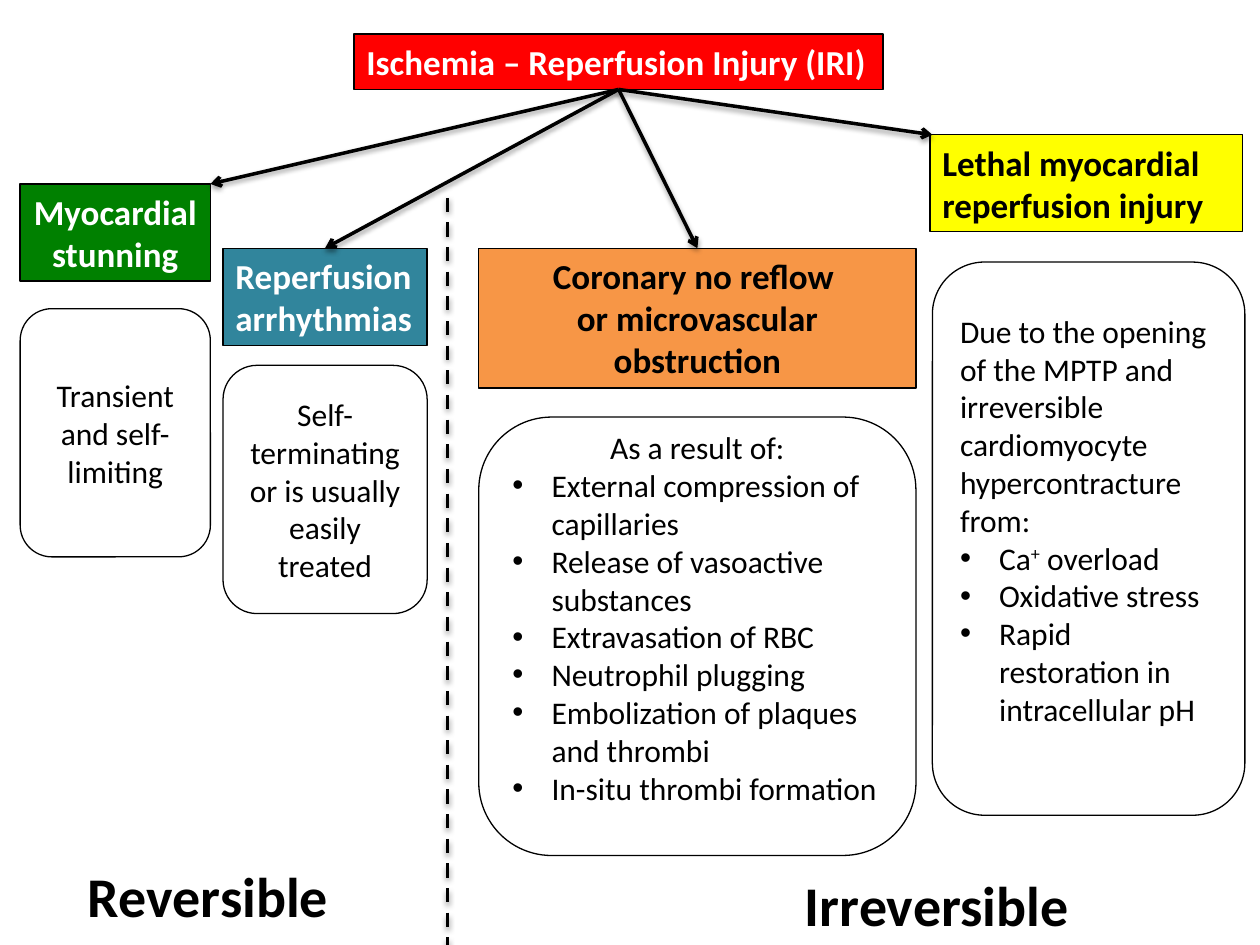
"""Build a slide that sorts the forms of ischemia-reperfusion injury by reversibility."""
from dataclasses import dataclass
from typing import Optional

import lxml.etree
import pptx
import pptx.dml.color
import pptx.enum.dml
import pptx.enum.shapes
import pptx.enum.text
import pptx.oxml
import pptx.oxml.ns
import pptx.util

Inches = pptx.util.Inches
Pt = pptx.util.Pt
Align = pptx.enum.text.PP_ALIGN
Anchor = pptx.enum.text.MSO_ANCHOR
AutoSize = pptx.enum.text.MSO_AUTO_SIZE
Preset = pptx.enum.shapes.MSO_SHAPE
qn = pptx.oxml.ns.qn


@dataclass(frozen=True)
class Theme:
    """Colours, font and type sizes of the slide."""
    font: str = "Calibri"
    black: str = "000000"
    white: str = "FFFFFF"
    red: str = "FF0000"
    green: str = "008000"
    teal: str = "31859C"
    orange: str = "F79646"
    yellow: str = "FFFF00"
    heading: int = 20
    body: int = 18
    verdict: int = 32
    outline: float = 0.75
    arrow: float = 2


@dataclass(frozen=True)
class Area:
    """Position and size in inches."""
    left: float
    top: float
    width: float
    height: float

    def lengths(self) -> tuple:
        """Return the four values as lengths."""
        return tuple(Inches(value) for value in (self.left, self.top, self.width, self.height))


@dataclass(frozen=True)
class Heading:
    """Coloured label naming one kind of injury."""
    area: Area
    lines: tuple
    fill: str
    color: str
    align: Align = Align.LEFT
    wrap: bool = False


@dataclass(frozen=True)
class Detail:
    """Rounded panel with an introduction and optional bullets."""
    area: Area
    intro: tuple
    bullets: tuple = ()
    align: Align = Align.CENTER


@dataclass(frozen=True)
class Arrow:
    """Arrow from the title to a point or to the top of a heading."""
    end: tuple
    target: Optional[int] = None


THEME = Theme()
TITLE = Heading(Area(2.81, 0.27, 4.2, 0.44), ("Ischemia – Reperfusion Injury (IRI)",), THEME.red, THEME.white)
HEADINGS = (
    Heading(Area(0.16, 1.46, 1.51, 0.77), ("Myocardial ", "stunning"), THEME.green, THEME.white, Align.CENTER),
    Heading(Area(1.77, 1.97, 1.62, 0.77), ("Reperfusion", "arrhythmias"), THEME.teal, THEME.white),
    Heading(Area(3.8, 1.97, 3.47, 1.11), ("Coronary no reflow ", "or microvascular obstruction"),
            THEME.orange, THEME.black, Align.CENTER, True),
    Heading(Area(7.38, 1.07, 2.48, 0.77), ("Lethal myocardial", "reperfusion injury"),
            THEME.yellow, THEME.black, wrap=True),
)
DETAILS = (
    Detail(Area(0.16, 2.45, 1.51, 1.97), ("Transient and self-limiting",)),
    Detail(Area(1.77, 2.9, 1.62, 1.97), ("Self-terminating or is usually easily treated",)),
    Detail(Area(7.4, 2.08, 2.48, 4.39),
           ("Due to the opening of the MPTP and irreversible cardiomyocyte", "hypercontracture from:"),
           ("Ca^+^ overload", "Oxidative stress", "Rapid restoration in intracellular pH"), Align.LEFT),
    Detail(Area(3.8, 3.31, 3.47, 3.48), ("As a result of:",),
           ("External compression of capillaries", "Release of vasoactive substances", "Extravasation of RBC",
            "Neutrophil plugging", "Embolization of plaques and thrombi", "In-situ thrombi formation")),
)
ARROWS = (Arrow((1.67, 1.46)), Arrow((2.58, 1.97), 1), Arrow((5.54, 1.97), 2), Arrow((7.4, 1.07)))
VERDICTS = {"Reversible": Area(0.6, 6.79, 2.14, 0.64), "Irreversible": Area(6.29, 6.86, 2.33, 0.64)}
SHADOW = (
    f'<a:effectLst xmlns:a="{pptx.oxml.ns.nsuri("a")}">'
    f'<a:outerShdw blurRad="{Pt(3.1)}" dist="{Pt(1.6)}" dir="5400000" rotWithShape="0">'
    f'<a:srgbClr val="{THEME.black}"><a:alpha val="38000"/></a:srgbClr></a:outerShdw></a:effectLst>'
)


def rgb(value: str) -> pptx.dml.color.RGBColor:
    """Turn a hex string into a colour."""
    return pptx.dml.color.RGBColor.from_string(value)


def add_bullet(para) -> None:
    """Give a paragraph a hanging round bullet."""
    properties = para._p.get_or_add_pPr()
    properties.set("marL", str(Inches(0.31)))
    properties.set("indent", str(-Inches(0.31)))
    lxml.etree.SubElement(properties, qn("a:buFont")).set("typeface", "Arial")
    lxml.etree.SubElement(properties, qn("a:buChar")).set("char", "•")


def write(frame, lines: tuple, size: int, color: str, align: Align, bold: bool, bullets: tuple = ()) -> None:
    """Fill a frame with lines and bullets; carets enclose superscripts."""
    frame.text = "\n".join(lines + bullets)
    for index, para in enumerate(frame.paragraphs):
        is_bullet = index >= len(lines)
        para.alignment = Align.LEFT if is_bullet else align
        if is_bullet:
            add_bullet(para)
        first, *others = para.text.split("^")
        para.runs[0].text = first
        for position, part in enumerate(others):
            span = para.add_run()
            span.text = part
            if position % 2 == 0:
                span._r.get_or_add_rPr().set("baseline", "30000")
        for span in para.runs:
            span.font.name = THEME.font
            span.font.size = Pt(size)
            span.font.bold = bold
            span.font.color.rgb = rgb(color)


def draw_box(page, preset: Preset, area: Area, fill: str):
    """Draw a flat outlined box."""
    box = page.shapes.add_shape(preset, *area.lengths())
    box.shadow.inherit = False
    box.fill.solid()
    box.fill.fore_color.rgb = rgb(fill)
    box.line.color.rgb = rgb(THEME.black)
    box.line.width = Pt(THEME.outline)
    return box


def fit_frame(box, wrap: bool):
    """Make a box grow with its text and return its frame."""
    frame = box.text_frame
    frame.word_wrap = wrap
    frame.auto_size = AutoSize.SHAPE_TO_FIT_TEXT
    frame.vertical_anchor = Anchor.TOP
    return frame


def draw_heading(page, heading: Heading):
    """Draw a coloured heading."""
    box = draw_box(page, Preset.RECTANGLE, heading.area, heading.fill)
    write(fit_frame(box, heading.wrap), heading.lines, THEME.heading, heading.color, heading.align, True)
    return box


def draw_detail(page, detail: Detail) -> None:
    """Draw a rounded panel, lifting bulleted text by one line."""
    frame = draw_box(page, Preset.ROUNDED_RECTANGLE, detail.area, THEME.white).text_frame
    frame.word_wrap = True
    frame.vertical_anchor = Anchor.MIDDLE
    if detail.bullets:
        frame.margin_bottom = Inches(0.35)
    write(frame, detail.intro, THEME.body, THEME.black, detail.align, False, detail.bullets)


def draw_line(page, start: tuple, end: tuple):
    """Draw a straight black line with a soft shadow."""
    line = page.shapes.add_connector(
        pptx.enum.shapes.MSO_CONNECTOR.STRAIGHT, *(Inches(value) for value in start + end))
    line.line.color.rgb = rgb(THEME.black)
    line.line.width = Pt(THEME.arrow)
    line._element.spPr.append(pptx.oxml.parse_xml(SHADOW))
    return line


def main() -> None:
    """Build and save the deck."""
    deck = pptx.Presentation()
    deck.slide_width, deck.slide_height = Inches(10), Inches(7.5)
    page = deck.slides.add_slide(deck.slide_layouts[6])
    title = draw_heading(page, TITLE)
    headings = [draw_heading(page, heading) for heading in HEADINGS]
    for arrow in ARROWS:
        line = draw_line(page, (4.91, 0.71), arrow.end)
        line.begin_connect(title, 2)
        if arrow.target is not None:
            line.end_connect(headings[arrow.target], 0)
        lxml.etree.SubElement(line.line._get_or_add_ln(), qn("a:tailEnd")).set("type", "arrow")
    divider = draw_line(page, (3.55, 1.57), (3.55, 7.5))
    divider.line.dash_style = pptx.enum.dml.MSO_LINE.DASH
    for detail in DETAILS:
        draw_detail(page, detail)
    for text, area in VERDICTS.items():
        box = page.shapes.add_textbox(*area.lengths())
        write(fit_frame(box, False), (text,), THEME.verdict, THEME.black, Align.LEFT, True)
    deck.save("out.pptx")


if __name__ == "__main__":
    main()
